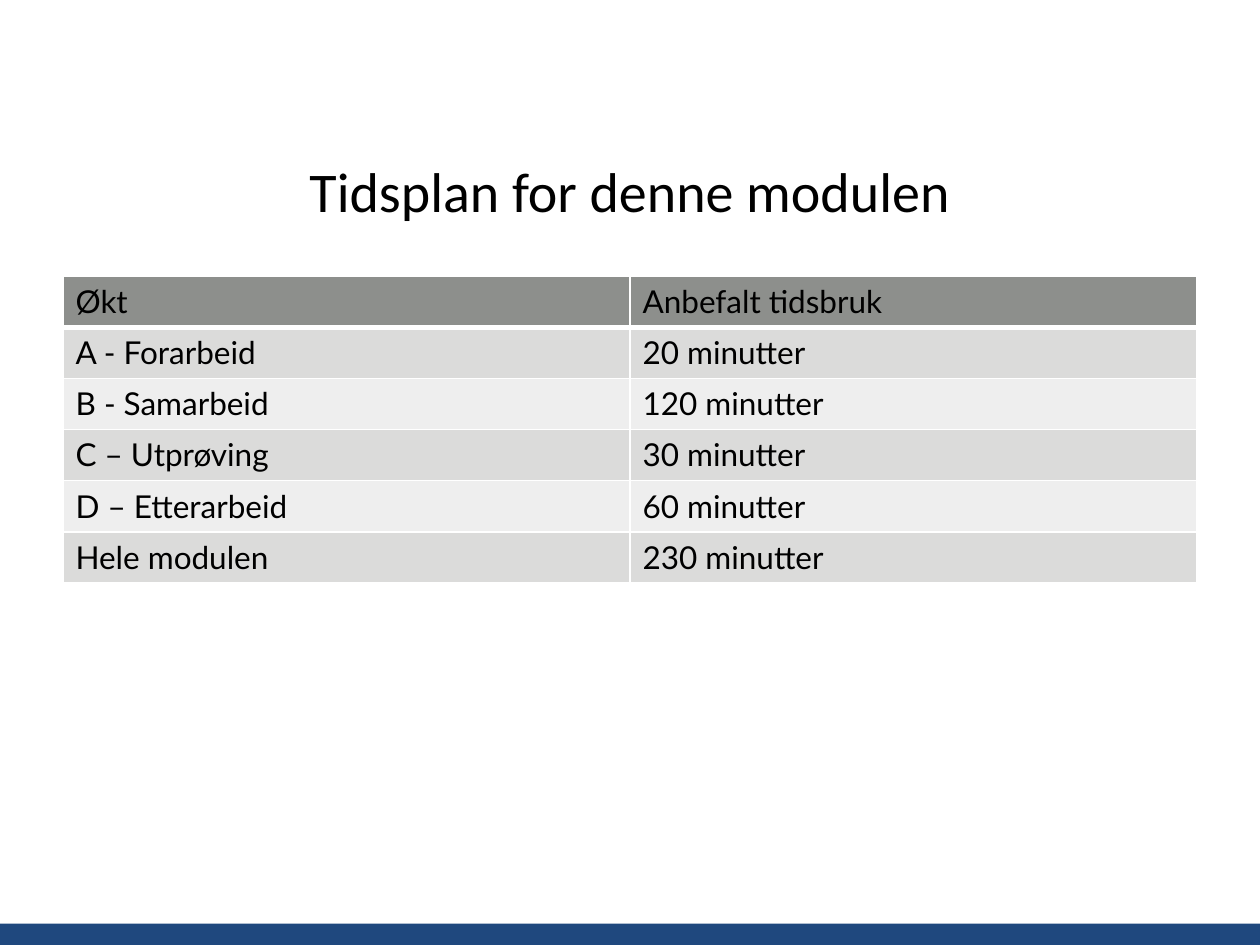
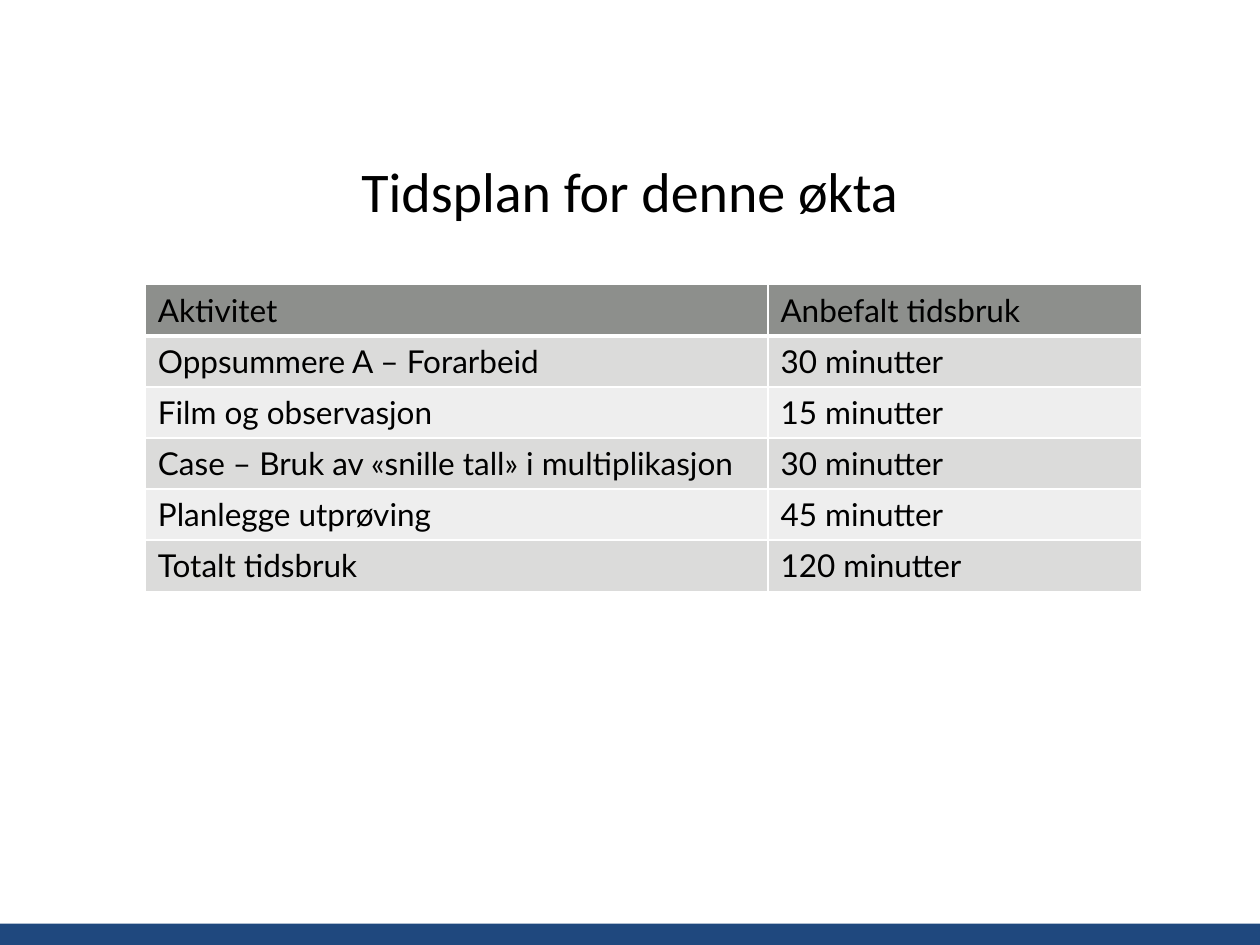
from lxml.etree import SubElement
from pptx import Presentation
from pptx.dml.color import RGBColor
from pptx.enum.shapes import MSO_SHAPE
from pptx.enum.text import MSO_ANCHOR, PP_ALIGN
from pptx.oxml.ns import qn
from pptx.util import Cm, Pt

SLIDE_WIDTH, SLIDE_HEIGHT = 25.4, 19.05
BAND_HEIGHT = 0.43
ROW_HEIGHT = 1.03
BLUE, BLACK, WHITE = "1F487E", "000000", "FFFFFF"
HEADER_GREY = "8D8F8C"
ROW_GREYS = ("EEEEEE", "DBDBDA")
TITLE_FONT, TABLE_FONT = "Calibri", "Lato"

MODULE_ROWS = [
    ("Økt", "Anbefalt tidsbruk"),
    ("A - Forarbeid", "20 minutter"),
    ("B - Samarbeid", "120 minutter"),
    ("C – Utprøving", "30 minutter"),
    ("D – Etterarbeid", "60 minutter"),
    ("Hele modulen", "230 minutter"),
]
SESSION_ROWS = [
    ("Aktivitet", "Anbefalt tidsbruk"),
    ("Oppsummere A – Forarbeid", "30 minutter"),
    ("Film og observasjon", "15 minutter"),
    ("Case – Bruk av «snille tall» i multiplikasjon", "30 minutter"),
    ("Planlegge utprøving", "45 minutter"),
    ("Totalt tidsbruk", "120 minutter"),
]


def set_fill(item, color):
    item.fill.solid()
    item.fill.fore_color.rgb = RGBColor.from_string(color)


def format_text(paragraph, font_name, size):
    for run in paragraph.runs:
        run.font.name = font_name
        run.font.size = Pt(size)
        run.font.bold = False
        run.font.color.rgb = RGBColor.from_string(BLACK)


def add_band(slide):
    band = slide.shapes.add_shape(
        MSO_SHAPE.RECTANGLE, 0, Cm(SLIDE_HEIGHT - BAND_HEIGHT),
        Cm(SLIDE_WIDTH), Cm(BAND_HEIGHT))
    band.shadow.inherit = False
    band.line.fill.background()
    set_fill(band, BLUE)


def add_title(slide, title):
    box = slide.shapes.add_textbox(Cm(1.27), Cm(2.54), Cm(22.86), Cm(2.57))
    text_frame = box.text_frame
    text_frame.word_wrap = True
    text_frame.vertical_anchor = MSO_ANCHOR.MIDDLE
    text_frame.text = title
    paragraph = text_frame.paragraphs[0]
    paragraph.alignment = PP_ALIGN.CENTER
    format_text(paragraph, TITLE_FONT, 32)


def set_borders(cell, bottom_width):
    properties = cell._tc.get_or_add_tcPr()
    widths = {"a:lnL": 1, "a:lnR": 1, "a:lnT": 1, "a:lnB": bottom_width}
    for tag, width in widths.items():
        line = SubElement(properties, qn(tag), w=str(Pt(width)))
        fill = SubElement(line, qn("a:solidFill"))
        SubElement(fill, qn("a:srgbClr"), val=WHITE)


def add_schedule(slide, left, top, column_widths, rows):
    table = slide.shapes.add_table(
        len(rows), len(column_widths), Cm(left), Cm(top),
        Cm(sum(column_widths)), Cm(ROW_HEIGHT * len(rows))).table
    for column, width in zip(table.columns, column_widths):
        column.width = Cm(width)
    for row_index, texts in enumerate(rows):
        is_header = row_index == 0
        for column_index, text in enumerate(texts):
            cell = table.cell(row_index, column_index)
            cell.text_frame.text = text
            format_text(cell.text_frame.paragraphs[0], TABLE_FONT, 18)
            set_borders(cell, 3 if is_header else 1)
            set_fill(cell, HEADER_GREY if is_header else ROW_GREYS[row_index % 2])


def add_schedule_slide(presentation, title, left, top, column_widths, rows):
    slide = presentation.slides.add_slide(presentation.slide_layouts[6])
    add_band(slide)
    add_title(slide, title)
    add_schedule(slide, left, top, column_widths, rows)


def main():
    presentation = Presentation()
    presentation.slide_width = Cm(SLIDE_WIDTH)
    presentation.slide_height = Cm(SLIDE_HEIGHT)
    add_schedule_slide(presentation, "Tidsplan for denne modulen",
                       1.27, 5.57, (11.43, 11.43), MODULE_ROWS)
    add_schedule_slide(presentation, "Tidsplan for denne økta",
                       2.93, 5.74, (12.55, 7.53), SESSION_ROWS)
    presentation.save("out.pptx")


if __name__ == "__main__":
    main()
